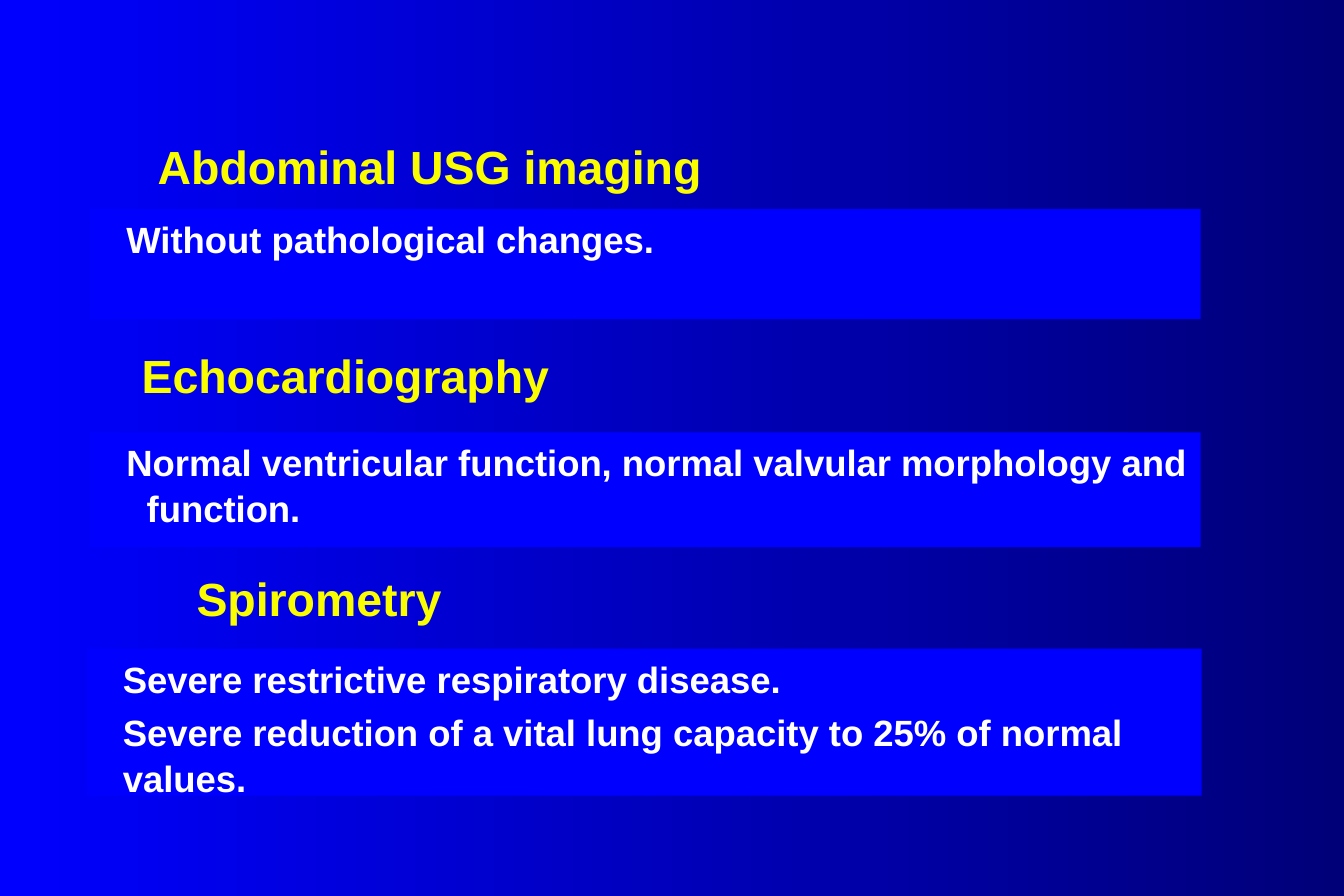
from dataclasses import dataclass

from pptx import Presentation
from pptx.dml.color import RGBColor
from pptx.enum.shapes import MSO_SHAPE
from pptx.enum.text import MSO_ANCHOR, MSO_AUTO_SIZE, PP_ALIGN
from pptx.util import Pt

PX = 9144  # 100 px to the inch
RECT = MSO_SHAPE.RECTANGLE
TOP = MSO_ANCHOR.TOP
LEFT, CENTER = PP_ALIGN.LEFT, PP_ALIGN.CENTER
NO_FIT = MSO_AUTO_SIZE.NONE


@dataclass(frozen=True)
class Theme:
    font: str = "Arial"
    blue: RGBColor = RGBColor(0, 0, 255)
    navy: RGBColor = RGBColor(0, 0, 0x78)
    white: RGBColor = RGBColor(255, 255, 255)
    yellow: RGBColor = RGBColor(0xFA, 0xFD, 0)
    head: int = 28
    body: int = 22
    gap: float = 4.4
    line: float = 1.05


THEME = Theme()


def px(*sizes):
    return [size * PX for size in sizes]


def place(shape, box):
    shape.left, shape.top, shape.width, shape.height = px(*box)


def set_frame(frame):
    frame.word_wrap = True
    frame.auto_size = NO_FIT
    frame.vertical_anchor = TOP
    frame.margin_left = frame.margin_right = 10 * PX
    frame.margin_top = frame.margin_bottom = 5 * PX


def style(para, size, color, align):
    para.alignment = align
    para.line_spacing = THEME.line
    font = para.font
    font.name = THEME.font
    font.size = Pt(size)
    font.bold = True
    font.color.rgb = color


def paint(slide):
    fill = slide.background.fill
    fill.gradient()
    fill.gradient_angle = 0
    for stop, color in zip(fill.gradient_stops, (THEME.blue, THEME.navy)):
        stop.color.rgb = color


def write_head(shape, text, align):
    frame = shape.text_frame
    set_frame(frame)
    frame.text = text
    style(frame.paragraphs[0], THEME.head, THEME.yellow, align)


def add_title(slide, text, box):
    title = slide.shapes.title
    place(title, box)
    write_head(title, text, LEFT)


def add_head(slide, text, box):
    write_head(slide.shapes.add_textbox(*px(*box)), text, CENTER)


def add_panel(slide, lines, box, margin, indent):
    """Add a blue panel; margin and indent set the paragraphs' left edges."""
    panel = slide.shapes.add_shape(RECT, *px(*box))
    panel.shadow.inherit = False
    panel.fill.solid()
    panel.fill.fore_color.rgb = THEME.blue
    panel.line.fill.background()
    frame = panel.text_frame
    set_frame(frame)
    frame.text = "\n".join(lines)
    for i, para in enumerate(frame.paragraphs):
        props = para._p.get_or_add_pPr()
        props.set("marL", str(margin * PX))
        props.set("indent", str(indent * PX))
        style(para, THEME.body, THEME.white, LEFT)
        para.space_before = Pt(THEME.gap if i else 0)


def main():
    deck = Presentation()
    deck.slide_width, deck.slide_height = px(1125, 750)
    slide = deck.slides.add_slide(deck.slide_layouts[5])
    paint(slide)

    add_title(slide, "Abdominal USG imaging", (122, 108, 567, 57))
    add_panel(slide, ["Without pathological changes."],
              (75, 175, 930, 92), 38, -17)

    add_head(slide, "Echocardiography", (103, 283, 372, 57))
    add_panel(slide, ["Normal ventricular function, normal valvular "
                      "morphology and function."],
              (75, 362, 930, 96), 38, -17)

    add_head(slide, "Spirometry", (103, 470, 328, 57))
    add_panel(slide, ["Severe restrictive respiratory disease.",
                      "Severe reduction of a vital lung capacity to 25% "
                      "of normal values."],
              (73, 543, 933, 123), 20, 0)

    deck.save("out.pptx")


if __name__ == "__main__":
    main()
